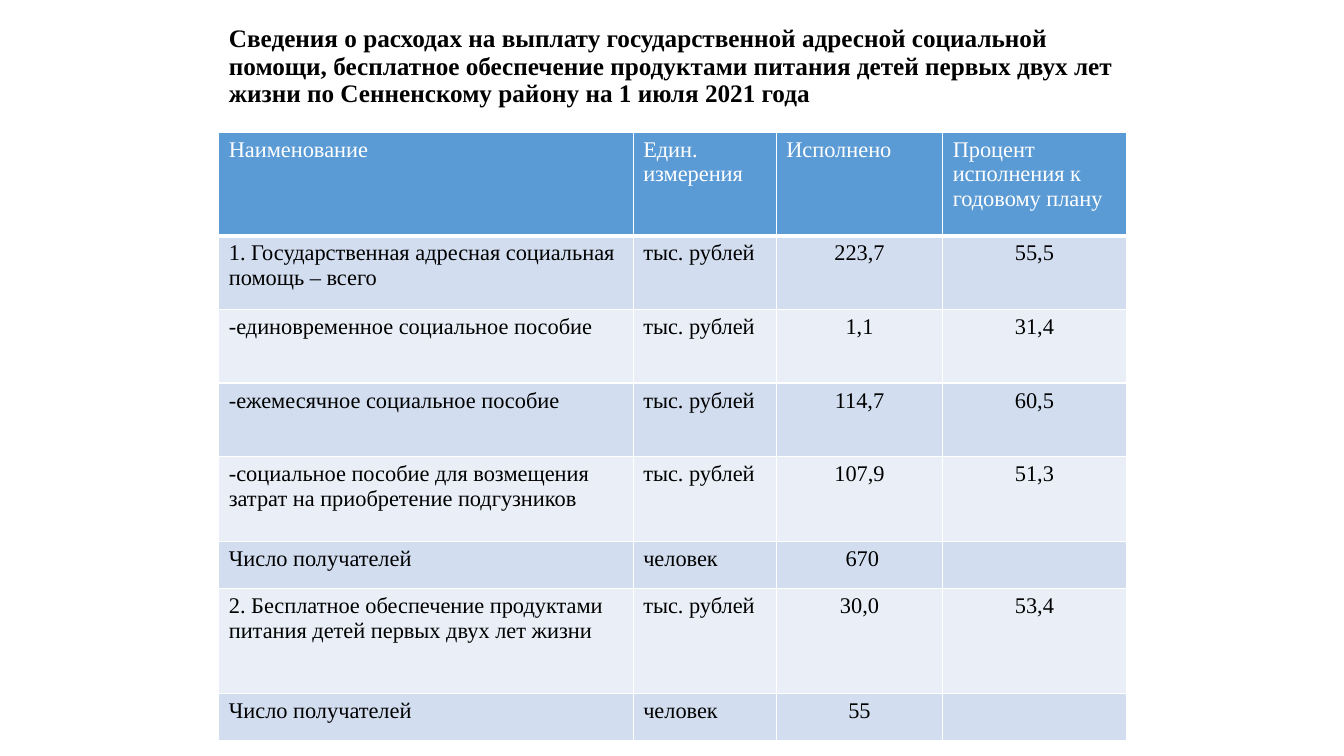
from dataclasses import dataclass

from lxml.etree import SubElement as Sub
from pptx import Presentation
from pptx.dml.color import RGBColor as Rgb
from pptx.enum.text import MSO_ANCHOR as Anchor, MSO_AUTO_SIZE as Fit, PP_ALIGN as Align
from pptx.oxml.ns import qn
from pptx.slide import Slide
from pptx.table import _Cell as Cell
from pptx.text.text import _Paragraph as Para
from pptx.util import Inches, Pt


@dataclass(frozen=True)
class Theme:
    font: str = "Times New Roman"
    title: int = 18
    body: int = 16
    ink: str = "000000"
    white: str = "FFFFFF"
    head: str = "5B9BD5"
    bands: tuple[str, str] = ("D2DEEF", "EAEFF7")
    rule: int = 1
    thick: int = 3


@dataclass(frozen=True)
class Row:
    height: float
    name: str
    unit: str
    done: str
    share: str = ""

    def texts(self) -> tuple[str, ...]:
        return self.name, self.unit, self.done, self.share


THEME = Theme()
LEFT, WIDTH = 2.17, 9.0
COLS = (4.11, 1.42, 1.65, 1.82)
TITLE = (
    "Сведения о расходах на выплату государственной адресной социальной помощи, "
    "бесплатное обеспечение продуктами питания детей первых двух лет жизни "
    "по Сенненскому району на 1 июля 2021 года"
)
MONEY, PEOPLE, COUNT = "тыс. рублей", "человек", "Число получателей"
ROWS = (
    Row(1.03, "Наименование", "Един. измерения", "Исполнено", "Процент исполнения к годовому плану"),
    Row(0.73, "1. Государственная адресная социальная помощь – всего", MONEY, "223,7", "55,5"),
    Row(0.73, "-единовременное социальное пособие", MONEY, "1,1", "31,4"),
    Row(0.73, "-ежемесячное социальное пособие", MONEY, "114,7", "60,5"),
    Row(0.84, "-социальное пособие для возмещения затрат на приобретение подгузников", MONEY, "107,9", "51,3"),
    Row(0.47, COUNT, PEOPLE, " 670"),
    Row(1.04, "2. Бесплатное обеспечение продуктами питания детей первых двух лет жизни", MONEY, "30,0", "53,4"),
    Row(0.47, COUNT, PEOPLE, "55"),
)


def style(para: Para, size: int, color: str, bold: bool = False) -> None:
    font = para.font
    font.name, font.size, font.bold = THEME.font, Pt(size), bold
    font.color.rgb = Rgb.from_string(color)


def edge(cell: Cell, first: bool) -> None:
    props = cell._tc.get_or_add_tcPr()
    for side in "LRTB":
        width = THEME.thick if first and side == "B" else THEME.rule
        line = Sub(props, qn(f"a:ln{side}"), w=str(Pt(width)))
        Sub(Sub(line, qn("a:solidFill")), qn("a:srgbClr"), val=THEME.white)


def add_title(slide: Slide) -> None:
    title = slide.shapes.title
    title.left, title.top = Inches(LEFT), Inches(0.24)
    title.width, title.height = Inches(WIDTH), Inches(0.85)
    frame = title.text_frame
    frame.text = TITLE
    frame.word_wrap, frame.auto_size = True, Fit.NONE
    frame.vertical_anchor = Anchor.MIDDLE
    frame.margin_top = frame.margin_bottom = 0
    para = frame.paragraphs[0]
    para.alignment, para.line_spacing = Align.LEFT, 0.9
    style(para, THEME.title, THEME.ink, True)


def add_grid(slide: Slide) -> None:
    height = sum(row.height for row in ROWS)
    grid = slide.shapes.add_table(
        len(ROWS), len(COLS), Inches(LEFT), Inches(1.31), Inches(WIDTH), Inches(height)
    ).table
    for col, width in zip(grid.columns, COLS):
        col.width = Inches(width)
    for r, row in enumerate(ROWS):
        first = r == 0
        fill = THEME.head if first else THEME.bands[(r - 1) % 2]
        grid.rows[r].height = Inches(row.height)
        for c, text in enumerate(row.texts()):
            cell = grid.cell(r, c)
            cell.text = text
            edge(cell, first)
            cell.fill.solid()
            cell.fill.fore_color.rgb = Rgb.from_string(fill)
            para = cell.text_frame.paragraphs[0]
            para.alignment = Align.LEFT if first or c < 2 else Align.CENTER
            style(para, THEME.body, THEME.white if first else THEME.ink)


def main() -> None:
    deck = Presentation()
    deck.slide_width, deck.slide_height = Inches(13.33), Inches(7.5)
    slide = deck.slides.add_slide(deck.slide_layouts[5])
    add_title(slide)
    add_grid(slide)
    deck.save("out.pptx")


if __name__ == "__main__":
    main()
